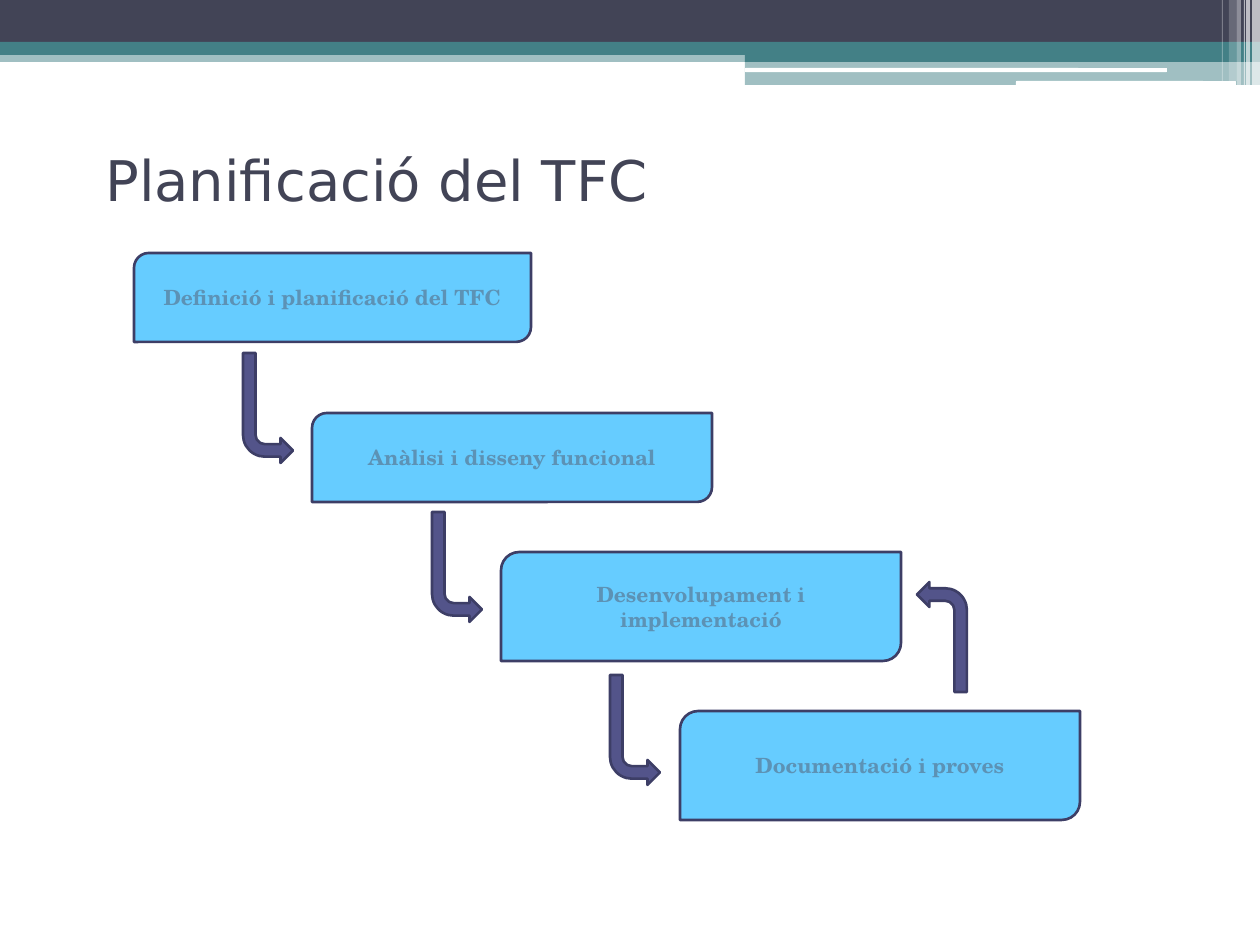
from lxml import etree
from pptx import Presentation
from pptx.dml.color import RGBColor
from pptx.enum.shapes import MSO_SHAPE
from pptx.enum.text import MSO_ANCHOR, PP_ALIGN
from pptx.oxml.ns import qn
from pptx.util import Pt

EMU_PER_PX = 914400 / 126
RECTANGLE = MSO_SHAPE.RECTANGLE
ROUNDED = MSO_SHAPE.ROUNDED_RECTANGLE
STEP_SHAPE = MSO_SHAPE.ROUND_2_DIAG_RECTANGLE
BENT_ARROW = MSO_SHAPE.BENT_ARROW
MIDDLE = MSO_ANCHOR.MIDDLE
LEFT, CENTER = PP_ALIGN.LEFT, PP_ALIGN.CENTER

COLORS = {
    "dark": "424456",
    "teal": "438086",
    "white": "FFFFFF",
    "step": "66CCFF",
    "step_text": "5C92B5",
    "outline": "3D3E66",
    "arrow": "53548A",
}
TITLE_FONT = "DejaVu Sans"
STEP_FONT = "TeX Gyre Schola"

# kind, left, top, width, height, colour, opacity in percent
HEADER_BARS = [
    (RECTANGLE, 0, 50, 1260, 12, "teal", 50),
    (RECTANGLE, 0, 0, 1260, 42, "dark", 100),
    (RECTANGLE, 0, 42, 1260, 13, "teal", 100),
    (RECTANGLE, 745, 49, 515, 13, "teal", 100),
    (RECTANGLE, 745, 61, 515, 24, "teal", 50),
    (ROUNDED, 745, 68, 422, 4, "white", 100),
    (ROUNDED, 1016, 81, 220, 5, "white", 100),
]
# left, width, height, opacity in percent
HEADER_STRIPES = [
    (1252, 8, 86, 65),
    (1246, 4, 86, 65),
    (1244, 1, 86, 60),
    (1237, 4, 86, 40),
    (1229, 8, 81, 20),
    (1222, 1, 81, 30),
]
# text, left, top, width, height
STEPS = [
    ("Definició i planificació del TFC", 0, 0, 397, 89),
    ("Anàlisi i disseny funcional", 178, 160, 400, 89),
    ("Desenvolupament i implementació", 367, 299, 400, 109),
    ("Documentació i proves", 546, 458, 400, 109),
]
# left, top, flip attribute
ARROWS = [
    (109, 100, "flipV"),
    (298, 259, "flipV"),
    (476, 422, "flipV"),
    (783, 329, "flipH"),
]
ARROW_WIDTH, ARROW_HEIGHT = 50, 110


def px(value):
    return round(value * EMU_PER_PX)


def color(name):
    return RGBColor.from_string(COLORS[name])


def add_filled(slide, kind, left, top, width, height, fill, opacity=100, outline=None):
    shape = slide.shapes.add_shape(kind, px(left), px(top), px(width), px(height))
    shape.shadow.inherit = False
    shape.fill.solid()
    shape.fill.fore_color.rgb = color(fill)
    if opacity < 100:
        srgb = shape.element.spPr.find(".//" + qn("a:srgbClr"))
        etree.SubElement(srgb, qn("a:alpha"), val=str(opacity * 1000))
    if outline:
        shape.line.color.rgb = color(outline)
        shape.line.width = Pt(1.5)
    else:
        shape.line.fill.background()
    return shape


def write_text(shape, text, font_name, size, color_name, alignment, bold=False):
    text_frame = shape.text_frame
    text_frame.text = text
    text_frame.word_wrap = True
    text_frame.vertical_anchor = MIDDLE
    paragraph = text_frame.paragraphs[0]
    paragraph.alignment = alignment
    font = paragraph.runs[0].font
    font.name = font_name
    font.size = Pt(size)
    font.bold = bold
    font.color.rgb = color(color_name)


def draw_header(slide, left, top):
    # Horizontal bands and lines
    for kind, x, y, width, height, fill, opacity in HEADER_BARS:
        add_filled(slide, kind, left + x, top + y, width, height, fill, opacity)
    # Pale vertical stripes at the right edge
    for x, width, height, opacity in HEADER_STRIPES:
        add_filled(slide, RECTANGLE, left + x, top, width, height, "white", opacity)


def draw_title(slide, left, top, width, height):
    title = slide.shapes.add_textbox(px(left), px(top), px(width), px(height))
    write_text(title, "Planificació del TFC", TITLE_FONT, 32, "dark", LEFT)


def draw_staircase(slide, left, top):
    # Project phases
    for text, x, y, width, height in STEPS:
        step = add_filled(slide, STEP_SHAPE, left + x, top + y, width, height,
                          "step", outline="outline")
        write_text(step, text, STEP_FONT, 12, "step_text", CENTER, bold=True)
    # Arrows between phases, the last one leading back
    for x, y, flip in ARROWS:
        arrow = add_filled(slide, BENT_ARROW, left + x, top + y,
                           ARROW_WIDTH, ARROW_HEIGHT, "arrow", outline="outline")
        arrow.element.spPr.find(qn("a:xfrm")).set(flip, "1")


def main():
    presentation = Presentation()
    presentation.slide_width = px(1260)
    presentation.slide_height = px(945)
    slide = presentation.slides.add_slide(presentation.slide_layouts[6])
    draw_header(slide, 0, 0)
    draw_title(slide, 93, 106, 1134, 147)
    draw_staircase(slide, 134, 253)
    presentation.save("out.pptx")


if __name__ == "__main__":
    main()
